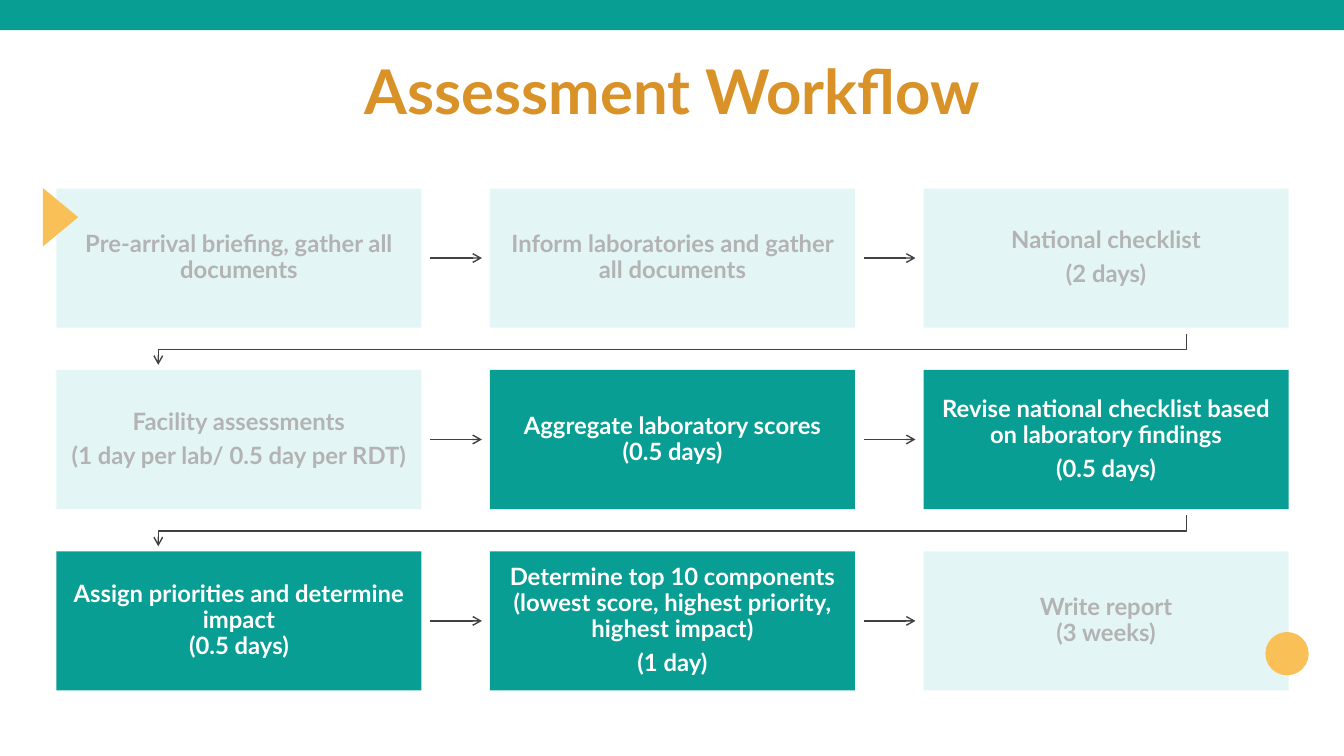
from pptx import Presentation
from pptx.dml.color import RGBColor
from pptx.enum.shapes import MSO_CONNECTOR as Link, MSO_SHAPE as Kind
from pptx.enum.text import MSO_ANCHOR as Anchor, PP_ALIGN as Align
from pptx.oxml.ns import qn
from pptx.util import Inches, Pt
from lxml import etree

FONT = "Lato"
COLORS = {
    "teal": "099E93", "pale": "E4F5F5", "gold": "D99228", "sun": "F8C056",
    "gray": "B3B3B3", "white": "FFFFFF", "ink": "414141",
}

# Grid of steps
LEFT, TOP = 0.56, 1.87
STEP_X, STEP_Y = 4.3, 1.8
BOX_W, BOX_H = 3.62, 1.38

# Each step: paragraphs, active or not, inset
STEPS = [
    [(["Pre-arrival briefing, gather all documents"], False, 0.16),
     (["Inform laboratories and gather all documents"], False, 0.16),
     (["National checklist", "(2 days)"], False, 0.16)],
    [(["Facility assessments", "(1 day per lab/ 0.5 day per RDT)"], False, 0.08),
     (["Aggregate laboratory scores (0.5 days)"], True, 0.16),
     (["Revise national checklist based on laboratory findings", "(0.5 days)"],
      True, 0.16)],
    [(["Assign priorities and determine impact\n(0.5 days)"], True, 0.16),
     (["Determine top 10 components (lowest score, highest priority, "
       "highest impact)", "(1 day)"], True, 0.04),
     (["Write report\n(3 weeks)"], False, 0.25)],
]


def color(name):
    return RGBColor.from_string(COLORS[name])


def style_text(para, size, tint, after):
    para.alignment = Align.CENTER
    para.line_spacing = 0.9
    para.space_before = Pt(0)
    para.space_after = Pt(after)
    for run in para.runs:
        font = run.font
        font.name, font.size, font.bold = FONT, Pt(size), True
        font.color.rgb = color(tint)


def add_form(slide, kind, x, y, w, h, fill, turn=0):
    form = slide.shapes.add_shape(kind, Inches(x), Inches(y), Inches(w), Inches(h))
    form.shadow.inherit = False
    form.fill.solid()
    form.fill.fore_color.rgb = color(fill)
    form.line.fill.background()
    form.rotation = turn
    return form


def add_title(slide, text):
    title = slide.shapes.title
    title.left, title.top = Inches(0.92), Inches(0.21)
    title.width, title.height = Inches(11.5), Inches(1.45)
    frame = title.text_frame
    frame.text = text
    frame.word_wrap = True
    frame.vertical_anchor = Anchor.MIDDLE
    style_text(frame.paragraphs[0], 44, "gold", 2)


def add_step(slide, x, y, lines, active, inset):
    box = add_form(slide, Kind.RECTANGLE, x, y, BOX_W, BOX_H,
                   "teal" if active else "pale")
    frame = box.text_frame
    frame.word_wrap = True
    frame.vertical_anchor = Anchor.MIDDLE
    frame.margin_left = frame.margin_right = Inches(inset)
    frame.margin_top = frame.margin_bottom = Inches(inset)
    for i, line in enumerate(lines):
        para = frame.add_paragraph() if i else frame.paragraphs[0]
        para.text = line
        style_text(para, 17, "white" if active else "gray", 6)


def style_arrow(item):
    item.line.color.rgb = color("ink")
    item.line.width = Pt(1)
    tail = etree.SubElement(item.line._get_or_add_ln(), qn("a:tailEnd"))
    tail.set("type", "arrow")


def add_arrow(slide, x, y):
    arrow = slide.shapes.add_connector(
        Link.STRAIGHT, Inches(x), Inches(y), Inches(x + 0.51), Inches(y))
    style_arrow(arrow)
    etree.SubElement(arrow._element.spPr, qn("a:effectLst"))


def add_return(slide, y):
    start, end, mid = 11.77, 1.57, y + 0.16
    points = [(start, mid), (end, mid), (end, y + 0.31)]
    pen = slide.shapes.build_freeform(Inches(start), Inches(y))
    pen.add_line_segments([(Inches(a), Inches(b)) for a, b in points], close=False)
    path = pen.convert_to_shape()
    path.shadow.inherit = False
    path.fill.background()
    style_arrow(path)


def main():
    deck = Presentation()
    deck.slide_width, deck.slide_height = Inches(13.33), Inches(7.5)
    slide = deck.slides.add_slide(deck.slide_layouts[5])

    # Header
    add_form(slide, Kind.RECTANGLE, 0, 0, 13.33, 0.3, "teal")
    add_title(slide, "Assessment Workflow")

    # Steps and arrows
    for r, row in enumerate(STEPS):
        y = TOP + r * STEP_Y
        for c, step in enumerate(row):
            x = LEFT + c * STEP_X
            add_step(slide, x, y, *step)
            if c < len(row) - 1:
                add_arrow(slide, x + BOX_W + 0.09, y + BOX_H / 2)
        if r < len(STEPS) - 1:
            add_return(slide, y + BOX_H + 0.06)

    # Start and end marks
    add_form(slide, Kind.ISOSCELES_TRIANGLE, 0.31, 1.98, 0.58, 0.35, "sun", 90)
    add_form(slide, Kind.OVAL, 12.55, 6.27, 0.43, 0.43, "sun")

    deck.save("out.pptx")


if __name__ == "__main__":
    main()
